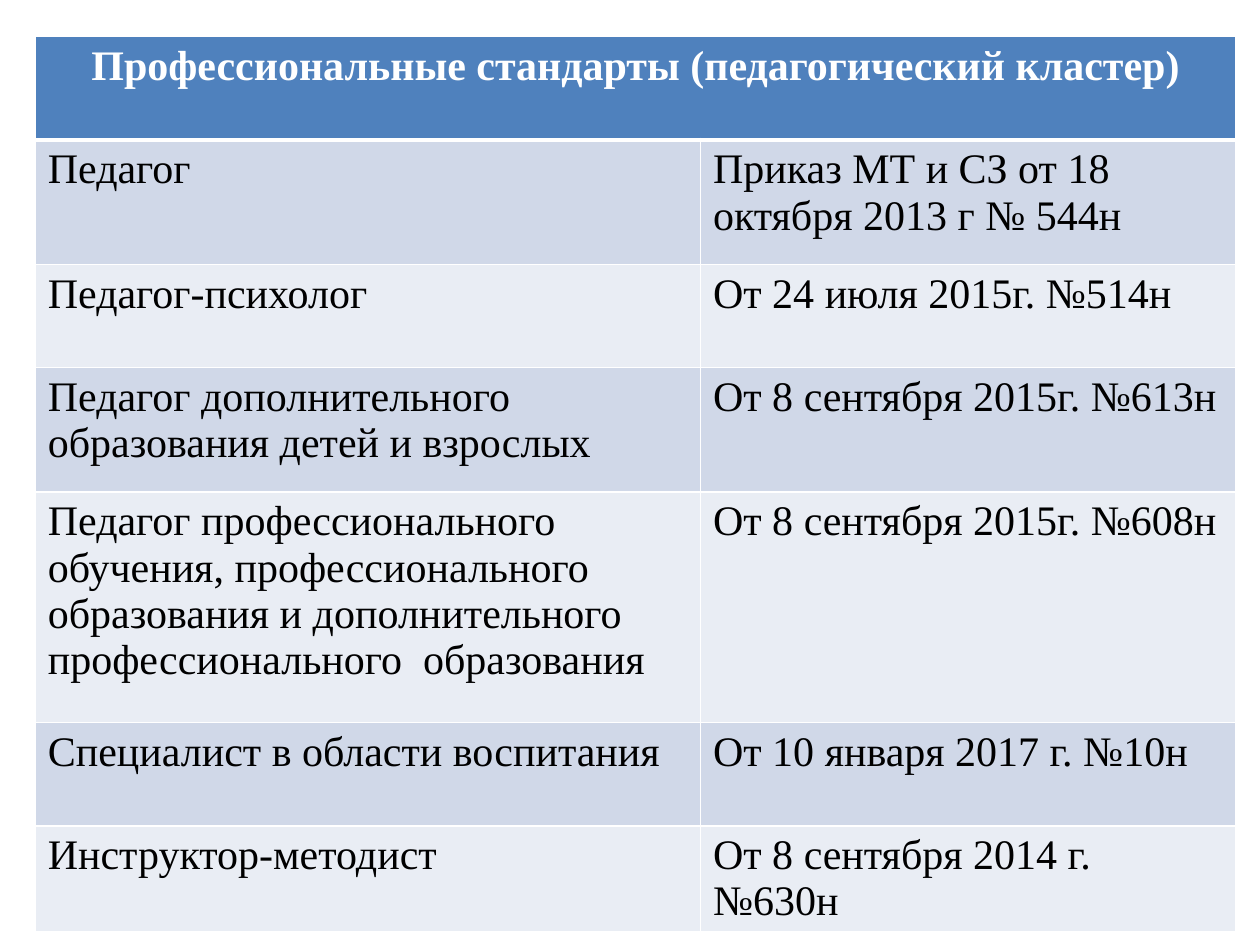
import pptx
import pptx.dml.color
import pptx.enum.text
import pptx.oxml
import pptx.oxml.ns
import pptx.util

Cm = pptx.util.Cm
Pt = pptx.util.Pt
RGBColor = pptx.dml.color.RGBColor
PP_ALIGN = pptx.enum.text.PP_ALIGN

WHITE = RGBColor(0xFF, 0xFF, 0xFF)
BLACK = RGBColor(0x00, 0x00, 0x00)
HEADER_BLUE = RGBColor(0x4F, 0x81, 0xBD)
BANDS = (RGBColor(0xD0, 0xD8, 0xE8), RGBColor(0xE9, 0xED, 0xF4))

HEADING = "Профессиональные стандарты (педагогический кластер)"

# Standard, order, row height in cm
STANDARDS = [
    ("Педагог", "Приказ МТ и СЗ от 18 октября 2013 г № 544н", 2.51),
    ("Педагог-психолог", "От 24 июля 2015г. №514н", 2.08),
    ("Педагог дополнительного образования детей и взрослых",
     "От 8 сентября 2015г. №613н", 2.51),
    ("Педагог профессионального обучения, профессионального образования "
     "и дополнительного профессионального  образования",
     "От 8 сентября 2015г. №608н", 4.65),
    ("Специалист в области воспитания", "От 10 января 2017 г. №10н", 2.08),
    ("Инструктор-методист", "От 8 сентября 2014 г. №630н", 2.08),
]
HEADER_HEIGHT = 2.08
COLUMN_WIDTHS = (13.41, 10.8)


def write_text(tf, text, font="Times New Roman", size=24, color=BLACK,
               bold=False, align=PP_ALIGN.LEFT):
    p = tf.paragraphs[0]
    p.alignment = align
    r = p.add_run()
    r.text = text
    r.font.name = font
    r.font.size = Pt(size)
    r.font.bold = bold
    r.font.color.rgb = color


class SlideBuilder:
    def __init__(self, slide, border=WHITE, border_width=1):
        self.slide = slide
        self.border = border
        self.border_width = border_width

    def table(self, left, top, widths, heights):
        frame = self.slide.shapes.add_table(
            len(heights), len(widths), Cm(left), Cm(top),
            Cm(sum(widths)), Cm(sum(heights)))
        table = frame.table
        for column, width in zip(table.columns, widths):
            column.width = Cm(width)
        for row, height in zip(table.rows, heights):
            row.height = Cm(height)
        return table

    def cell(self, cell, fill, **side_widths):
        """Set borders and fill; side_widths overrides widths, e.g. B=3."""
        tc_pr = cell._tc.get_or_add_tcPr()
        for side in "LRTB":
            width = Pt(side_widths.get(side, self.border_width))
            tc_pr.append(pptx.oxml.parse_xml(
                f'<a:ln{side} {pptx.oxml.ns.nsdecls("a")} w="{width}">'
                f'<a:solidFill><a:srgbClr val="{self.border}"/></a:solidFill>'
                f'</a:ln{side}>'))
        cell.fill.solid()
        cell.fill.fore_color.rgb = fill


def main():
    prs = pptx.Presentation()
    prs.slide_width, prs.slide_height = Cm(25.4), Cm(19.05)
    s = SlideBuilder(prs.slides.add_slide(prs.slide_layouts[6]))

    # Table grid
    heights = [HEADER_HEIGHT] + [height for *_, height in STANDARDS]
    table = s.table(0.71, 0.74, COLUMN_WIDTHS, heights)

    # Heading across both columns
    heading = table.cell(0, 0)
    heading.merge(table.cell(0, 1))
    for cell in table.rows[0].cells:
        s.cell(cell, HEADER_BLUE, B=3)
    write_text(heading.text_frame, HEADING, color=WHITE, bold=True,
               align=PP_ALIGN.CENTER)

    # Banded rows
    for i, (standard, order, _) in enumerate(STANDARDS):
        for j, text in enumerate((standard, order)):
            cell = table.cell(i + 1, j)
            s.cell(cell, BANDS[i % 2], T=3 if i == 0 else 1)
            write_text(cell.text_frame, text)

    prs.save("out.pptx")


if __name__ == "__main__":
    main()
